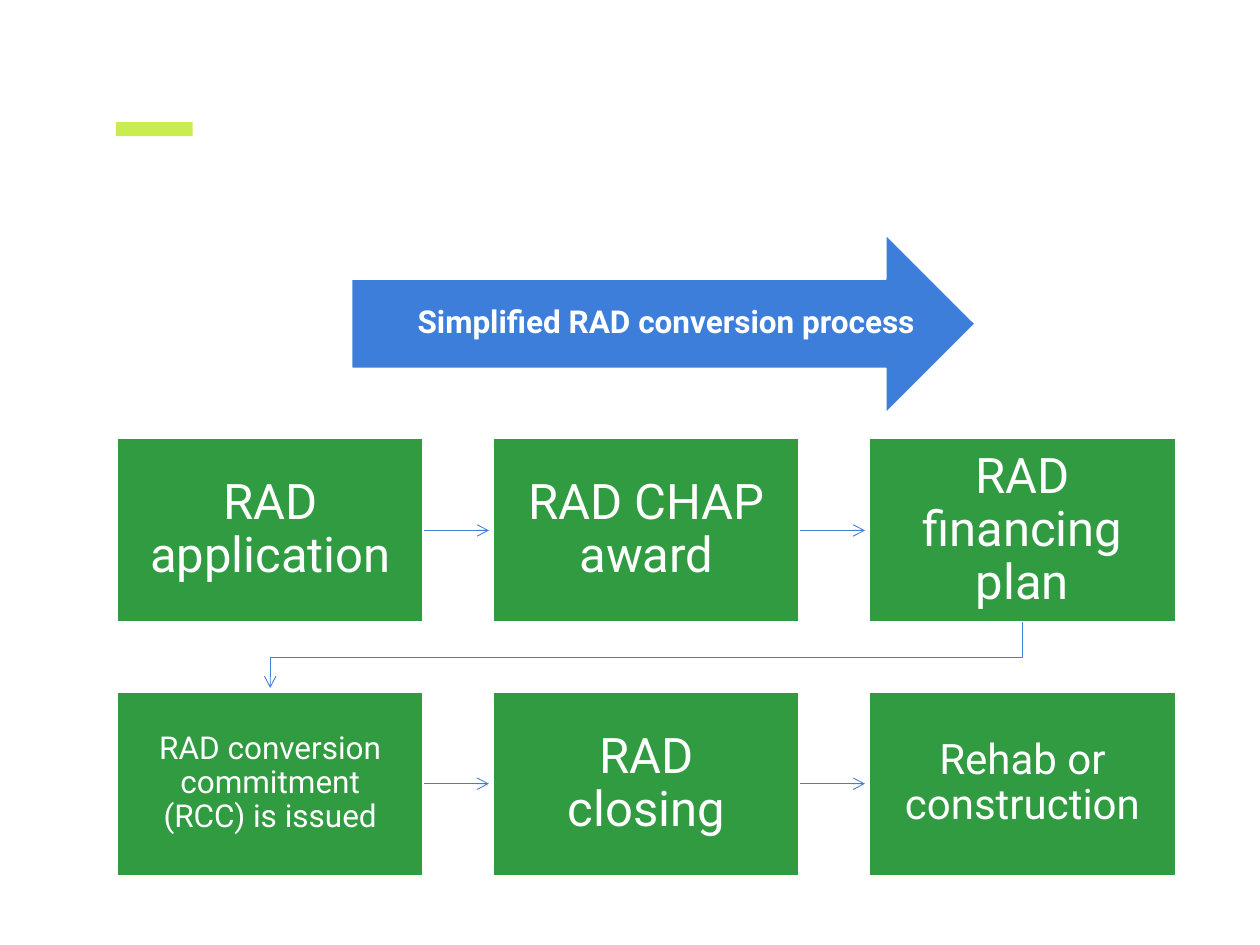
from lxml import etree
from pptx import Presentation
from pptx.dml.color import RGBColor
from pptx.enum.shapes import MSO_CONNECTOR, MSO_SHAPE
from pptx.enum.text import MSO_ANCHOR, PP_ALIGN
from pptx.oxml.ns import qn
from pptx.util import Inches, Pt

RECT, ARROW = MSO_SHAPE.RECTANGLE, MSO_SHAPE.RIGHT_ARROW
LINE = MSO_CONNECTOR.STRAIGHT
MIDDLE, CENTER = MSO_ANCHOR.MIDDLE, PP_ALIGN.CENTER
WIDE, HIGH = 10, 7.5
LEFT, TOP = 0.93, 3.48
STEP_X, STEP_Y = 2.985, 2.01
BOX_W, BOX_H = 2.43, 1.46
GREEN, BLUE, LIME, WHITE = "319B42", "3D7EDB", "C9EC51", "FFFFFF"
STEPS = [
    [("RAD application", 28), ("RAD CHAP award", 28), ("RAD financing plan", 28)],
    [("RAD conversion commitment (RCC) is issued", 18), ("RAD closing", 28),
     ("Rehab or construction", 24)],
]


def color(code):
    return RGBColor.from_string(code)


def write(shape, text, size=28, bold=False, pad=(0.22, 0.22, 0.22, 0.22)):
    frame = shape.text_frame
    frame.word_wrap = True
    frame.vertical_anchor = MIDDLE
    (frame.margin_left, frame.margin_top,
     frame.margin_right, frame.margin_bottom) = map(Inches, pad)
    para = frame.paragraphs[0]
    para.alignment, para.line_spacing = CENTER, 0.9
    run = para.add_run()
    run.text = text
    font = run.font
    font.name, font.size, font.bold = "Roboto", Pt(size), bold
    font.color.rgb = color(WHITE)


class Flow:
    """Holds the slide and draws the parts of a grid of steps."""

    def __init__(self, slide):
        self.shapes = slide.shapes

    def place(self, col, row):
        return LEFT + col * STEP_X, TOP + row * STEP_Y

    def block(self, kind, x, y, w, h, fill, edge=None):
        shape = self.shapes.add_shape(kind, *map(Inches, (x, y, w, h)))
        shape.shadow.inherit = False
        shape.fill.solid()
        shape.fill.fore_color.rgb = color(fill)
        if edge:
            shape.line.color.rgb = color(edge)
            shape.line.width = Pt(1)
        else:
            shape.line.fill.background()
        return shape

    def step(self, col, row, text, size):
        x, y = self.place(col, row)
        write(self.block(RECT, x, y, BOX_W, BOX_H, GREEN, WHITE), text, size)

    def tip(self, shape):
        shape.line.color.rgb = color(BLUE)
        shape.line.width = Pt(0.5)
        edge = shape.line._get_or_add_ln()
        etree.SubElement(edge, qn("a:tailEnd"), type="arrow")

    def link(self, col, row):
        x, y = self.place(col, row)
        start, mid = x + BOX_W, y + BOX_H / 2
        line = self.shapes.add_connector(
            LINE, *map(Inches, (start, mid, start + 0.52, mid)))
        self.tip(line)
        etree.SubElement(line._element.spPr, qn("a:effectLst"))

    def turn(self, last, row):
        x, y = self.place(last, row)
        end, below = self.place(0, row + 1)
        x, end, y = x + BOX_W / 2, end + BOX_W / 2, y + BOX_H
        mid = (y + below) / 2
        pen = self.shapes.build_freeform(Inches(x), Inches(y))
        points = [(x, mid), (end, mid), (end, below - 0.03)]
        pen.add_line_segments(
            [(Inches(a), Inches(b)) for a, b in points], close=False)
        path = pen.convert_to_shape()
        path.shadow.inherit = False
        path.fill.background()
        self.tip(path)


def main():
    deck = Presentation()
    deck.slide_width, deck.slide_height = Inches(WIDE), Inches(HIGH)
    flow = Flow(deck.slides.add_slide(deck.slide_layouts[6]))
    flow.block(RECT, 0.92, 0.97, 0.61, 0.11, LIME)
    for row, steps in enumerate(STEPS):
        for col, (text, size) in enumerate(steps):
            if col < len(steps) - 1:
                flow.link(col, row)
            flow.step(col, row, text, size)
    flow.turn(2, 0)
    banner = flow.block(ARROW, 2.79, 1.86, 4.95, 1.42, BLUE, WHITE)
    write(banner, "Simplified RAD conversion process", 18, True, (0.4, 0.2, 0, 0.2))
    deck.save("out.pptx")


if __name__ == "__main__":
    main()
